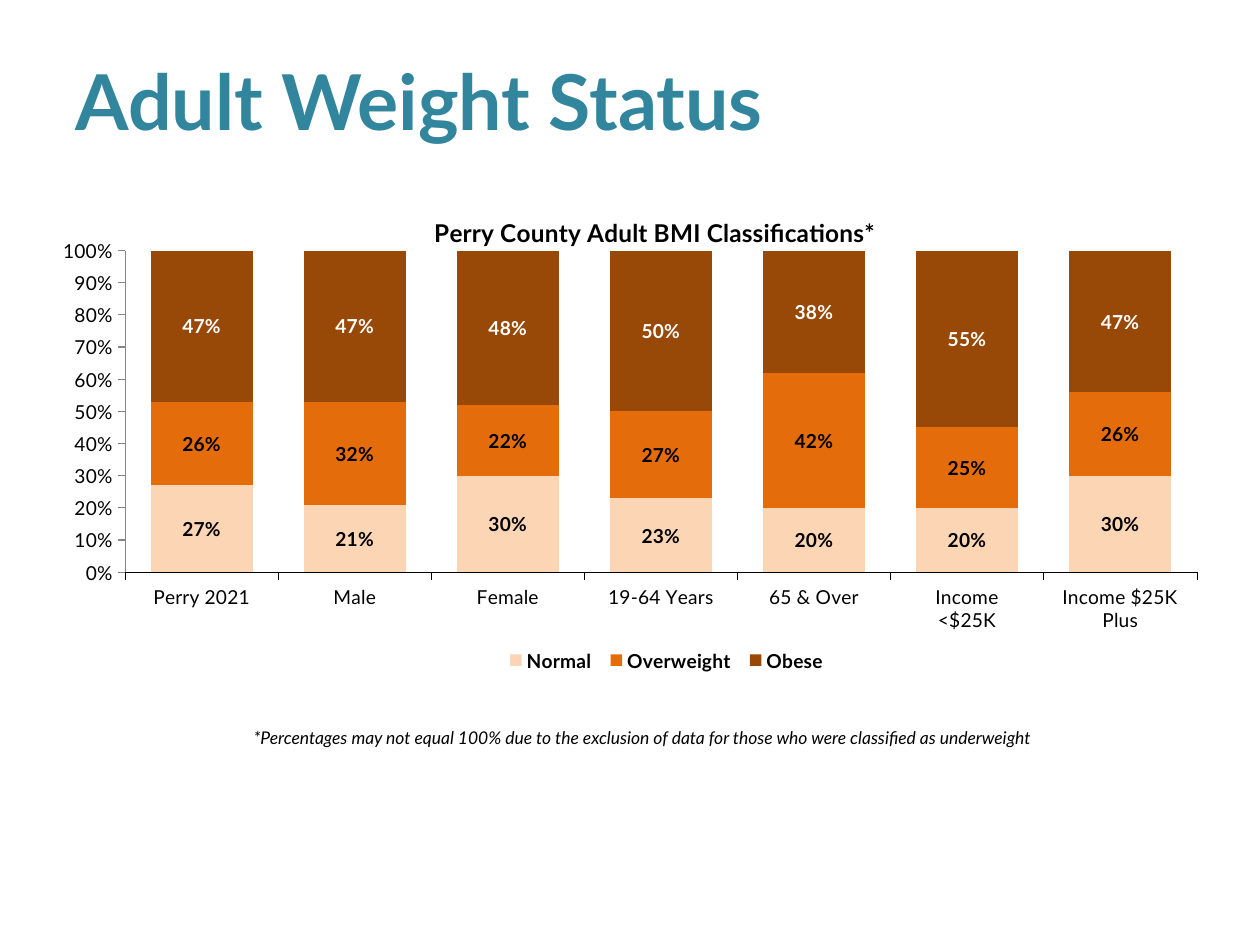
from lxml import etree
from pptx import Presentation
from pptx.chart.data import CategoryChartData
from pptx.dml.color import RGBColor
from pptx.enum.chart import (XL_CHART_TYPE, XL_LABEL_POSITION, XL_LEGEND_POSITION,
                             XL_TICK_LABEL_POSITION, XL_TICK_MARK)
from pptx.enum.text import MSO_ANCHOR, PP_ALIGN
from pptx.oxml.ns import qn
from pptx.util import Inches, Pt

STACKED = XL_CHART_TYPE.COLUMN_STACKED
CENTER_LABEL = XL_LABEL_POSITION.CENTER
LEGEND_BOTTOM = XL_LEGEND_POSITION.BOTTOM
LOW = XL_TICK_LABEL_POSITION.LOW
OUTSIDE, NO_TICK = XL_TICK_MARK.OUTSIDE, XL_TICK_MARK.NONE
MIDDLE, TOP = MSO_ANCHOR.MIDDLE, MSO_ANCHOR.TOP
LEFT, CENTER = PP_ALIGN.LEFT, PP_ALIGN.CENTER

FONT = "Lato"
PERCENT = "0%"
COLORS = {"heading": "31859C", "ink": "000000", "white": "FFFFFF", "axis": "868686",
          "normal": "FCD5B5", "overweight": "E46C0A", "obese": "984807"}

HEADING = "Adult Weight Status"
FOOTNOTE = ("*Percentages may not equal 100% due to the exclusion of data "
            "for those who were classified as underweight")
CHART_TITLE = "Perry County Adult BMI Classifications*"
GROUPS = ["Perry 2021", "Male", "Female", "19-64 Years", "65 & Over",
          "Income\n<$25K", "Income $25K Plus"]
CLASSES = [
    ("Normal", (0.27, 0.21, 0.3, 0.23, 0.2, 0.2, 0.3), "normal", "ink"),
    ("Overweight", (0.26, 0.32, 0.22, 0.27, 0.42, 0.25, 0.26), "overweight", "ink"),
    ("Obese", (0.47, 0.47, 0.48, 0.5, 0.38, 0.55, 0.47), "obese", "white"),
]
HEADING_AREA = (0.5, 0.21, 9, 1.17)
CHART_AREA = (0.5, 1.51, 9, 3.99)
FOOTNOTE_AREA = (0.18, 5.72, 9.83, 0.27)


def style(font, size, color="ink", **flags):
    values = {"name": FONT, "size": Pt(size), "bold": False, **flags}
    for attribute, value in values.items():
        setattr(font, attribute, value)
    font.color.rgb = RGBColor.from_string(COLORS[color])


def add_text(slide, area, text, anchor, align, size, color, **flags):
    frame = slide.shapes.add_textbox(*map(Inches, area)).text_frame
    frame.word_wrap = True
    frame.vertical_anchor = anchor
    paragraph = frame.paragraphs[0]
    paragraph.alignment = align
    run = paragraph.add_run()
    run.text = text
    style(run.font, size, color, **flags)


def place(part, index, inner=False, **shares):
    for old in part.findall(qn("c:layout")):
        part.remove(old)
    layout = etree.Element(qn("c:layout"))
    manual = etree.SubElement(layout, qn("c:manualLayout"))
    settings = {"layoutTarget": "inner"} if inner else {}
    settings.update(xMode="edge", yMode="edge", **shares)
    for tag, value in settings.items():
        etree.SubElement(manual, qn(f"c:{tag}")).set("val", str(value))
    part.insert(index, layout)


def format_axis(axis, line_color, line_width):
    values = {"has_major_gridlines": False, "major_tick_mark": OUTSIDE,
              "minor_tick_mark": NO_TICK}
    for attribute, value in values.items():
        setattr(axis, attribute, value)
    axis.format.line.width = Pt(line_width)
    axis.format.line.color.rgb = RGBColor.from_string(COLORS[line_color])
    style(axis.tick_labels.font, 11)


def add_bmi_chart(slide):
    data = CategoryChartData(number_format=PERCENT)
    data.categories = GROUPS
    for name, shares, *_ in CLASSES:
        data.add_series(name, shares)
    chart = slide.shapes.add_chart(STACKED, *map(Inches, CHART_AREA), data).chart
    style(chart.font, 10, bold=True)

    chart.has_title = True
    title = chart.chart_title
    title.include_in_layout = False
    run = title.text_frame.paragraphs[0].add_run()
    run.text = CHART_TITLE
    style(run.font, 14, bold=True)
    place(title._element, 1, x=0.32, y=0.04)

    chart.has_legend = True
    legend = chart.legend
    legend.position = LEGEND_BOTTOM
    legend.include_in_layout = False
    style(legend.font, 11, bold=True)
    place(legend._element, 1, x=0.38, y=0.9, w=0.3, h=0.07)

    plot = chart.plots[0]
    for attribute, value in {"gap_width": 50, "overlap": 100,
                             "vary_by_categories": False}.items():
        setattr(plot, attribute, value)
    place(plot._element.getparent(), 0, inner=True, x=0.05, y=0.12, w=0.95, h=0.64)

    format_axis(chart.category_axis, "ink", 0.25)
    chart.category_axis.tick_label_position = LOW
    format_axis(chart.value_axis, "axis", 0.75)
    for attribute, value in {"minimum_scale": 0, "maximum_scale": 1,
                             "major_unit": 0.1}.items():
        setattr(chart.value_axis, attribute, value)
    chart.value_axis.tick_labels.number_format = PERCENT
    chart.value_axis.tick_labels.number_format_is_linked = False

    for series, (_, _, fill, label_color) in zip(plot.series, CLASSES):
        series.format.fill.solid()
        series.format.fill.fore_color.rgb = RGBColor.from_string(COLORS[fill])
        labels = series.data_labels
        for attribute, value in {"show_value": True, "number_format": PERCENT,
                                 "number_format_is_linked": False,
                                 "position": CENTER_LABEL}.items():
            setattr(labels, attribute, value)
        style(labels.font, 11, label_color, bold=True)


def main():
    deck = Presentation()
    deck.slide_width, deck.slide_height = Inches(10), Inches(7.5)
    slide = deck.slides.add_slide(deck.slide_layouts[6])
    add_text(slide, HEADING_AREA, HEADING, MIDDLE, LEFT, 44, "heading", bold=True)
    add_text(slide, FOOTNOTE_AREA, FOOTNOTE, TOP, CENTER, 10, "ink", italic=True)
    add_bmi_chart(slide)
    deck.save("out.pptx")


if __name__ == "__main__":
    main()
